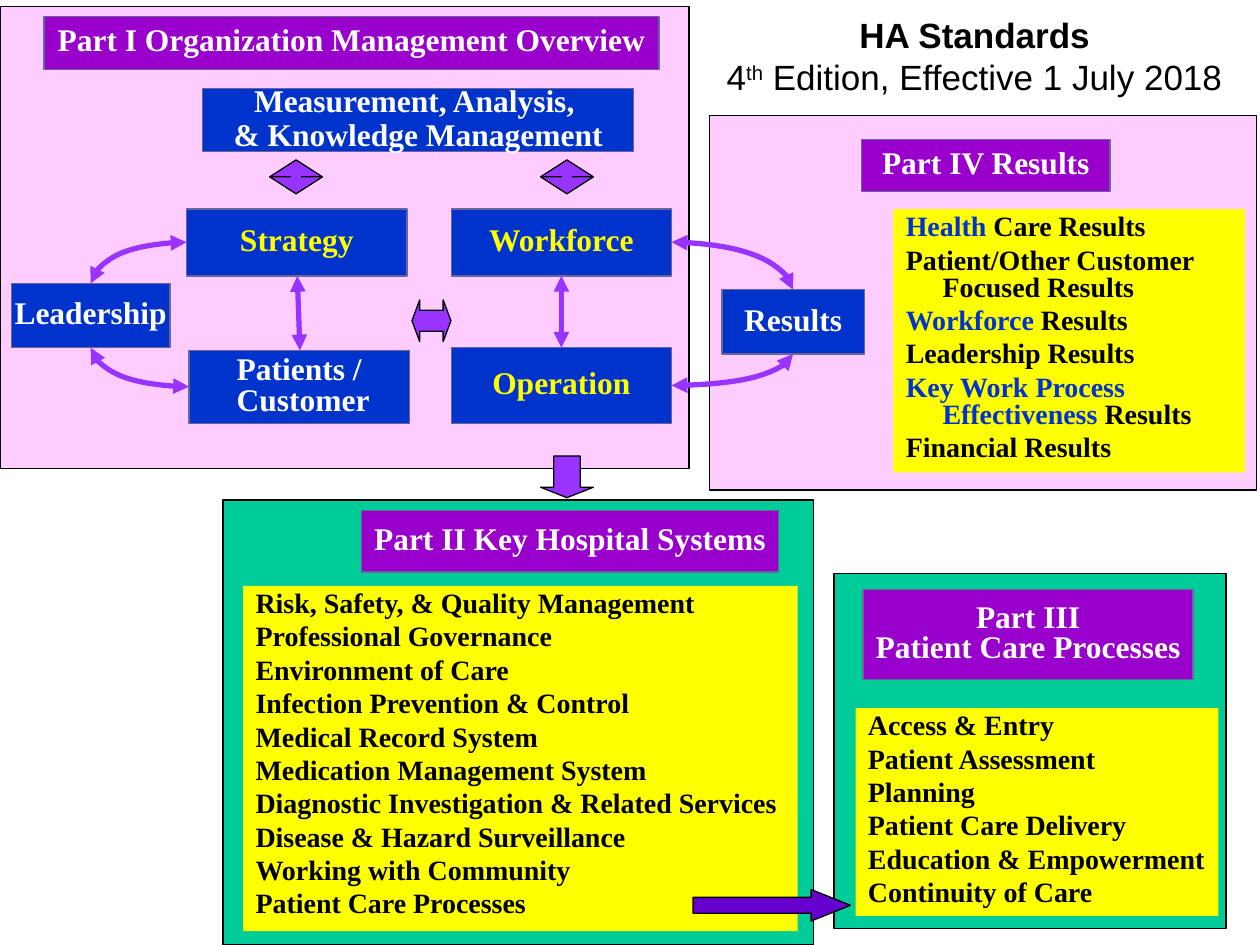
from dataclasses import dataclass

from lxml.etree import SubElement
from pptx import Presentation
from pptx.dml.color import RGBColor
from pptx.enum.shapes import MSO_CONNECTOR as LINK, MSO_SHAPE as SHAPE
from pptx.enum.text import MSO_ANCHOR as ANCHOR, MSO_AUTO_SIZE as FIT, PP_ALIGN as ALIGN
from pptx.oxml.ns import qn
from pptx.util import Pt


@dataclass(frozen=True)
class Theme:
    pink: str = "FFCCFF"
    green: str = "00CC99"
    yellow: str = "FFFF00"
    blue: str = "0033CC"
    purple: str = "9900CC"
    violet: str = "9933FF"
    indigo: str = "6600CC"
    slate: str = "666699"
    black: str = "000000"
    white: str = "FFFFFF"
    serif: str = "Times New Roman"
    sans: str = "Arial"
    heading: int = 20
    label: int = 18
    item: int = 16


theme = Theme()
deck = Presentation()
deck.slide_width, deck.slide_height = Pt(720), Pt(540)
slide = deck.slides.add_slide(deck.slide_layouts[6])


def add_block(kind, place, fill, outline=None):
    block = slide.shapes.add_shape(kind, *map(Pt, place))
    block.shadow.inherit = False
    block.fill.solid()
    block.fill.fore_color.rgb = RGBColor.from_string(fill)
    if outline:
        block.line.color.rgb = RGBColor.from_string(outline)
        block.line.width = Pt(0.75)
    else:
        block.line.fill.background()
    return block


def write(frame, lines, size, face, frame_format, line_format):
    for key, value in frame_format.items():
        setattr(frame, key, value)
    for index, line in enumerate(lines):
        paragraph = frame.add_paragraph() if index else frame.paragraphs[0]
        for key, value in line_format.items():
            setattr(paragraph, key, value)
        for words, color, bold in line:
            run = paragraph.add_run()
            run.text = words
            font_format = {"size": Pt(size), "name": face, "bold": bold}
            for key, value in font_format.items():
                setattr(run.font, key, value)
            run.font.color.rgb = RGBColor.from_string(color)


panels = [
    ((476.6, 327.6, 224, 203), theme.green),
    ((0, 3.6, 393.8, 264.2), theme.pink),
    ((405.4, 66.2, 312.5, 213.8), theme.pink),
    ((127.4, 285.8, 337.7, 254.2), theme.green),
]
for place, fill in panels:
    add_block(SHAPE.RECTANGLE, place, fill, theme.black)

hospital_systems = [
    "Risk, Safety, & Quality Management", "Professional Governance",
    "Environment of Care", "Infection Prevention & Control",
    "Medical Record System", "Medication Management System",
    "Diagnostic Investigation & Related Services",
    "Disease & Hazard Surveillance", "Working with Community",
    "Patient Care Processes",
]
care_processes = [
    "Access & Entry", "Patient Assessment", "Planning",
    "Patient Care Delivery", "Education & Empowerment", "Continuity of Care",
]
results = [
    ("Health ", "Care Results"), ("", "Patient/Other Customer Focused Results"),
    ("Workforce ", "Results"), ("", "Leadership Results"),
    ("Key Work Process Effectiveness ", "Results"), ("", "Financial Results"),
]
lists = [
    ((139, 334.8, 316.8, 197.3), [("", item) for item in hospital_systems], False),
    ((488.9, 404.6, 207.4, 118.8), [("", item) for item in care_processes], False),
    ((510.5, 119.5, 200.9, 150.5), results, True),
]
for place, items, hanging in lists:
    frame = add_block(SHAPE.RECTANGLE, place, theme.yellow).text_frame
    lines = [
        [(words, color, True) for words, color in ((lead, theme.blue), (rest, theme.black)) if words]
        for lead, rest in items
    ]
    write(frame, lines, theme.item, theme.serif,
          {"word_wrap": hanging, "vertical_anchor": ANCHOR.TOP, "auto_size": FIT.SHAPE_TO_FIT_TEXT},
          {"alignment": ALIGN.LEFT, "line_spacing": 0.8, "space_before": Pt(3.7)})
    if hanging:
        for paragraph in frame.paragraphs:
            properties = paragraph._p.get_or_add_pPr()
            properties.set("marL", str(Pt(21)))
            properties.set("indent", str(-Pt(21)))

block_arrows = [
    (SHAPE.LEFT_RIGHT_ARROW, (235.4, 171.4, 22.3, 23.8), 0.2, theme.violet),
    (SHAPE.UP_DOWN_ARROW, (154.1, 91.4, 30.2, 19.4), 0.2, theme.violet),
    (SHAPE.UP_DOWN_ARROW, (308.9, 91.4, 30.2, 19.4), 0.2, theme.violet),
    (SHAPE.DOWN_ARROW, (308.9, 260.6, 30.2, 23.8), 0.25, theme.violet),
    (SHAPE.RIGHT_ARROW, (396, 508.3, 90, 18), 1.25, theme.indigo),
]
for kind, place, head, fill in block_arrows:
    arrow = add_block(kind, place, fill, theme.black)
    arrow.adjustments[0] = 0.5
    arrow.adjustments[1] = head

labels = [
    ((6.5, 162, 90.7, 36.7), ["Leadership"], theme.blue, theme.white, 0.8),
    ((106.6, 119.5, 126, 38.2), ["Strategy"], theme.blue, theme.yellow, 0.8),
    ((108, 200.2, 126, 41.8), ["Patients /", " Customer"], theme.blue, theme.white, 0.8),
    ((115.9, 50.4, 246.2, 36), ["Measurement, Analysis, ", "& Knowledge Management"],
     theme.blue, theme.white, 0.9),
    ((257.8, 198.7, 126, 43.2), ["Operation"], theme.blue, theme.yellow, 0.8),
    ((257.8, 119.5, 126, 38.2), ["Workforce"], theme.blue, theme.yellow, 0.8),
    ((412.6, 165.6, 81.4, 36.7), ["Results"], theme.blue, theme.white, 0.8),
    ((493.2, 337, 188.6, 51.1), ["Part III", "Patient Care Processes"],
     theme.purple, theme.white, 0.8),
    ((206.6, 291.6, 238.3, 35.3), ["Part II Key Hospital Systems"],
     theme.purple, theme.white, 0.8),
    ((492.5, 79.9, 141.8, 29.5), ["Part IV Results"], theme.purple, theme.white, 0.8),
    ((25.2, 9.4, 351.4, 30.2), ["Part I Organization Management Overview"],
     theme.purple, theme.white, 0.8),
]
for place, lines, fill, color, spacing in labels:
    label = add_block(SHAPE.ACTION_BUTTON_CUSTOM, place, fill, theme.slate)
    write(label.text_frame, [[(line, color, True)] for line in lines], theme.label, theme.serif,
          {"word_wrap": False, "vertical_anchor": ANCHOR.MIDDLE},
          {"alignment": ALIGN.CENTER, "line_spacing": spacing})

links = [
    (LINK.STRAIGHT, (169.9, 157.7, 171.4, 200.2)),
    (LINK.STRAIGHT, (320.8, 157.7, 320.8, 198.7)),
    (LINK.CURVE, (106.6, 138.4, 51.8, 162)),
    (LINK.CURVE, (108, 221, 51.8, 198.7)),
    (LINK.CURVE, (383.8, 220.3, 453.2, 202.3)),
    (LINK.CURVE, (383.8, 138.4, 453.2, 165.6)),
]
for kind, ends in links:
    link = slide.shapes.add_connector(kind, *map(Pt, ends))
    link.line.color.rgb = RGBColor.from_string(theme.violet)
    link.line.width = Pt(3)
    properties = link._element.spPr
    if kind == LINK.CURVE:
        properties.find(qn("a:prstGeom")).set("prst", "curvedConnector2")
    for end in ("a:headEnd", "a:tailEnd"):
        SubElement(properties.find(qn("a:ln")), qn(end), type="triangle")
    SubElement(properties, qn("a:effectLst"))

heading = slide.shapes.add_textbox(*map(Pt, (406.1, 4.3, 301.7, 55.4))).text_frame
write(heading,
      [[("HA Standards", theme.black, True)],
       [(words, theme.black, False) for words in ("4", "th", " Edition, Effective 1 July 2018")]],
      theme.heading, theme.sans,
      {"word_wrap": False, "auto_size": FIT.SHAPE_TO_FIT_TEXT}, {"alignment": ALIGN.CENTER})
heading.paragraphs[1].runs[1].font._element.set("baseline", "30000")

deck.save("out.pptx")
